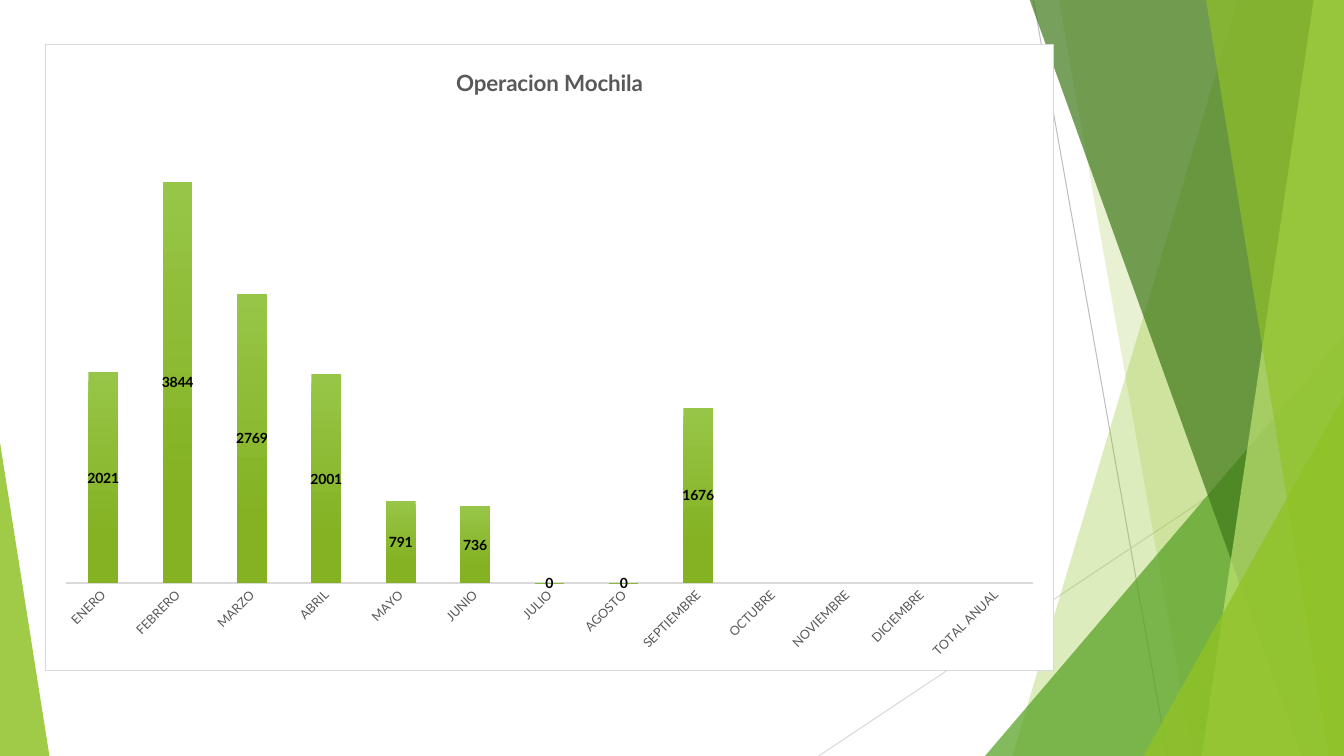
from dataclasses import dataclass

import pptx
import pptx.chart.chart
import pptx.chart.data
import pptx.dml.color
import pptx.dml.fill
import pptx.enum.chart
import pptx.enum.shapes
import pptx.oxml
import pptx.oxml.ns
import pptx.slide
import pptx.util
from pptx.dml.color import RGBColor
from pptx.util import Inches

WIDTH, HEIGHT, BLEED_TOP = 13.33, 7.5, -0.01
FONT = "Lato"

WHITE = RGBColor(0xFF, 0xFF, 0xFF)
BLACK = RGBColor(0x00, 0x00, 0x00)
TEXT_GRAY = RGBColor(0x59, 0x59, 0x59)
LINE_GRAY = RGBColor(0xBF, 0xBF, 0xBF)
PALE_GRAY = RGBColor(0xD9, 0xD9, 0xD9)
LIME = RGBColor(0x90, 0xC2, 0x26)
PALE_LIME = RGBColor(0xC0, 0xE4, 0x74)
GREEN = RGBColor(0x54, 0xA0, 0x21)
DARK_GREEN = RGBColor(0x3F, 0x78, 0x19)
BAR_TOP = RGBColor(0x97, 0xC5, 0x47)
BAR_BOTTOM = RGBColor(0x84, 0xB2, 0x23)

MONTHLY_COUNTS = {
    "ENERO": 2021, "FEBRERO": 3844, "MARZO": 2769, "ABRIL": 2001, "MAYO": 791,
    "JUNIO": 736, "JULIO": 0, "AGOSTO": 0, "SEPTIEMBRE": 1676, "OCTUBRE": None,
    "NOVIEMBRE": None, "DICIEMBRE": None, "TOTAL ANUAL": None,
}


@dataclass(frozen=True)
class Ray:
    start: tuple[float, float]
    end: tuple[float, float]
    color: RGBColor


@dataclass(frozen=True)
class Blade:
    """Four-sided facet that reaches the right edge of the slide."""
    top_x: float
    bottom_x: float
    color: RGBColor
    opacity: int


@dataclass(frozen=True)
class Corner:
    """Triangle that stands on the bottom edge of the slide."""
    left: float
    top: float
    width: float
    apex: float
    color: RGBColor
    opacity: int


RAYS = [
    Ray((10.25, 0), (11.58, HEIGHT), LINE_GRAY),
    Ray((WIDTH, 4.03), (8.12, HEIGHT), PALE_GRAY),
]
FACETS = [
    Blade(12.28, 10.04, LIME, 30),
    Blade(10.5, 11.83, LIME, 20),
    Corner(9.77, 3.33, 3.56, 1, GREEN, 72),
    Blade(10.21, 12.91, DARK_GREEN, 70),
    Blade(13.03, 11.92, PALE_LIME, 70),
    Blade(11.96, 13.18, LIME, 65),
    Corner(11.34, 3.93, 1.99, 1, LIME, 80),
    Corner(0, 4.39, 0.49, 0, LIME, 85),
]


def draw_ray(slide: pptx.slide.Slide, ray: Ray) -> None:
    line = slide.shapes.add_connector(
        pptx.enum.shapes.MSO_CONNECTOR.STRAIGHT,
        *(Inches(value) for value in ray.start + ray.end))
    line.line.color.rgb = ray.color
    line.line.width = pptx.util.Pt(0.75)
    properties = line.element.spPr
    properties.append(properties.makeelement(pptx.oxml.ns.qn("a:effectLst"), {}))


def draw_facet(slide: pptx.slide.Slide, facet: Blade | Corner) -> None:
    if isinstance(facet, Blade):
        outline = slide.shapes.build_freeform(
            Inches(facet.top_x), Inches(BLEED_TOP), scale=1.0)
        outline.add_line_segments(
            [(Inches(x), Inches(y)) for x, y in (
                (WIDTH, BLEED_TOP), (WIDTH, HEIGHT), (facet.bottom_x, HEIGHT))],
            close=True)
        shape = outline.convert_to_shape()
    else:
        shape = slide.shapes.add_shape(
            pptx.enum.shapes.MSO_SHAPE.ISOSCELES_TRIANGLE,
            Inches(facet.left), Inches(facet.top),
            Inches(facet.width), Inches(HEIGHT - facet.top))
        shape.adjustments[0] = facet.apex
    shape.shadow.inherit = False
    shape.line.fill.background()
    shape.fill.solid()
    shape.fill.fore_color.rgb = facet.color
    color = shape.element.spPr.find(
        f"{pptx.oxml.ns.qn('a:solidFill')}/{pptx.oxml.ns.qn('a:srgbClr')}")
    color.append(color.makeelement(
        pptx.oxml.ns.qn("a:alpha"), {"val": str(facet.opacity * 1000)}))


def set_font(font, size: float, color: RGBColor, bold: bool = False) -> None:
    font.name = FONT
    font.size = pptx.util.Pt(size)
    font.bold = bold
    font.color.rgb = color


def shade_bars(fill: pptx.dml.fill.FillFormat) -> None:
    fill.gradient()
    fill.gradient_angle = 270
    for stop, position, color in zip(
            fill.gradient_stops, (0, 0.78), (BAR_TOP, BAR_BOTTOM)):
        stop.position = position
        stop.color.rgb = color


def frame_chart(chart: pptx.chart.chart.Chart) -> None:
    """Set the card, the plot position and the label slant."""
    namespaces = pptx.oxml.ns.nsdecls("c", "a")
    card = pptx.oxml.parse_xml(
        f'<c:spPr {namespaces}>'
        f'<a:solidFill><a:srgbClr val="{WHITE}"/></a:solidFill>'
        f'<a:ln w="9525"><a:solidFill><a:srgbClr val="{PALE_GRAY}"/></a:solidFill></a:ln>'
        '</c:spPr>')
    chart.element.xpath("./c:chart")[0].addnext(card)

    plot_area = chart.element.xpath("./c:chart/c:plotArea")[0]
    for old_layout in plot_area.xpath("./c:layout"):
        plot_area.remove(old_layout)
    placement = "".join(
        f'<c:{key} val="{value}"/>' for key, value in (
            ("layoutTarget", "inner"), ("xMode", "edge"), ("yMode", "edge"),
            ("x", 0.02), ("y", 0.11), ("w", 0.96), ("h", 0.75)))
    plot_area.insert(0, pptx.oxml.parse_xml(
        f'<c:layout {namespaces}><c:manualLayout>{placement}</c:manualLayout></c:layout>'))

    label_body = plot_area.xpath("./c:catAx/c:txPr/a:bodyPr")[0]
    label_body.set("rot", "-2700000")
    label_body.set("vert", "horz")


def draw_chart(slide: pptx.slide.Slide) -> None:
    counts = pptx.chart.data.CategoryChartData()
    counts.categories = list(MONTHLY_COUNTS)
    counts.add_series("Series 1", list(MONTHLY_COUNTS.values()))
    chart = slide.shapes.add_chart(
        pptx.enum.chart.XL_CHART_TYPE.COLUMN_STACKED,
        Inches(0.45), Inches(0.44), Inches(10), Inches(6.22), counts).chart
    set_font(chart.font, 10, BLACK)
    chart.has_legend = False

    # Title
    chart.has_title = True
    chart.chart_title.include_in_layout = False
    heading = chart.chart_title.text_frame.paragraphs[0]
    heading.text = "Operacion Mochila"
    set_font(heading.font, 16, TEXT_GRAY, bold=True)

    # Axes
    months = chart.category_axis
    months.major_tick_mark = pptx.enum.chart.XL_TICK_MARK.NONE
    months.format.line.color.rgb = PALE_GRAY
    months.format.line.width = pptx.util.Pt(1)
    set_font(months.tick_labels.font, 9, TEXT_GRAY)
    scale = chart.value_axis
    scale.visible = False
    scale.has_major_gridlines = False
    scale.minimum_scale, scale.maximum_scale = 0, 4500

    # Bars and their values
    plot = chart.plots[0]
    plot.vary_by_categories = False
    plot.gap_width, plot.overlap = 150, 100
    bars = plot.series[0]
    shade_bars(bars.format.fill)
    bars.data_labels.show_value = True
    bars.data_labels.position = pptx.enum.chart.XL_LABEL_POSITION.CENTER
    set_font(bars.data_labels.font, 10, BLACK, bold=True)
    frame_chart(chart)


def main() -> None:
    deck = pptx.Presentation()
    deck.slide_width, deck.slide_height = Inches(WIDTH), Inches(HEIGHT)
    slide = deck.slides.add_slide(deck.slide_layouts[6])
    for ray in RAYS:
        draw_ray(slide, ray)
    for facet in FACETS:
        draw_facet(slide, facet)
    draw_chart(slide)
    deck.save("out.pptx")


if __name__ == "__main__":
    main()
